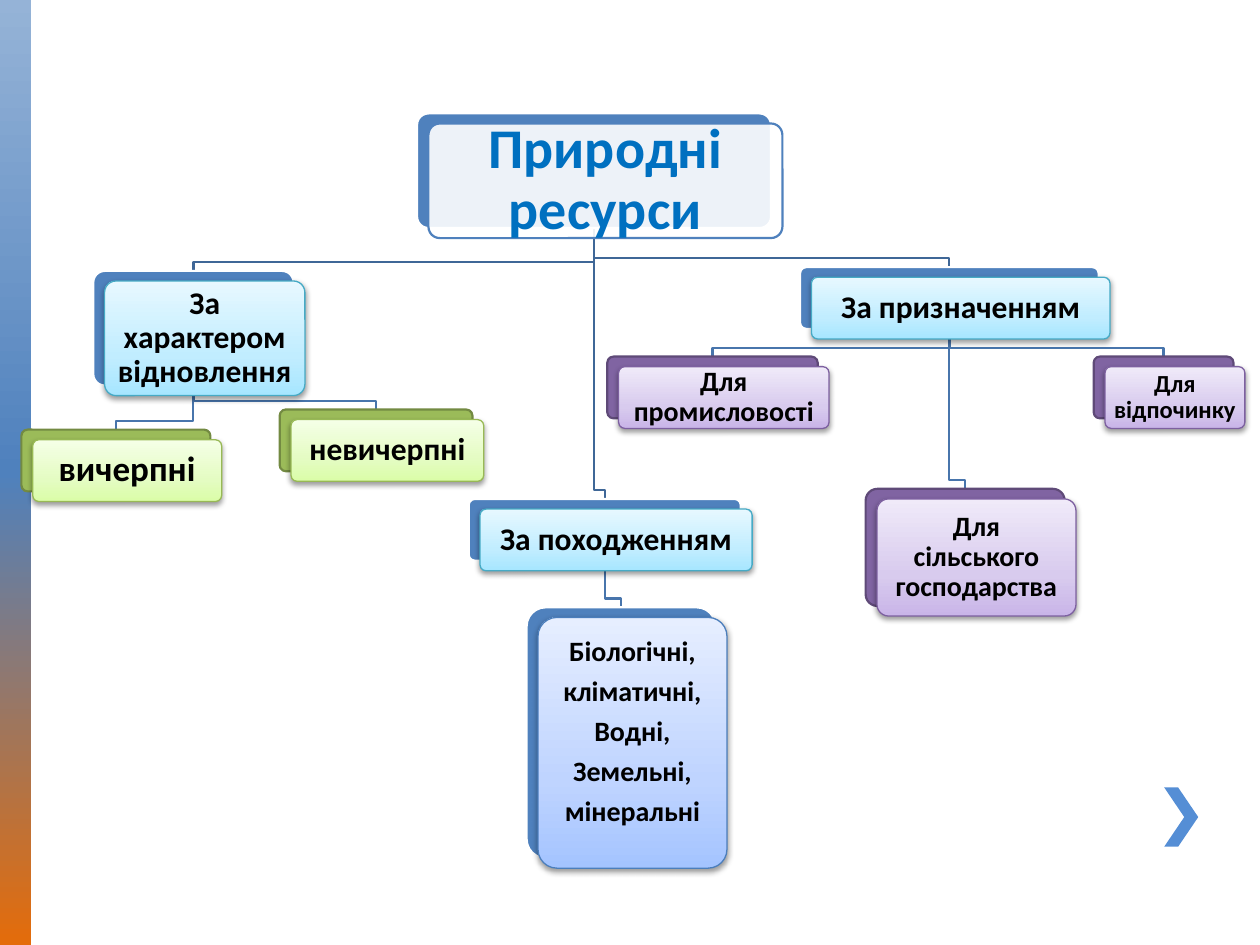
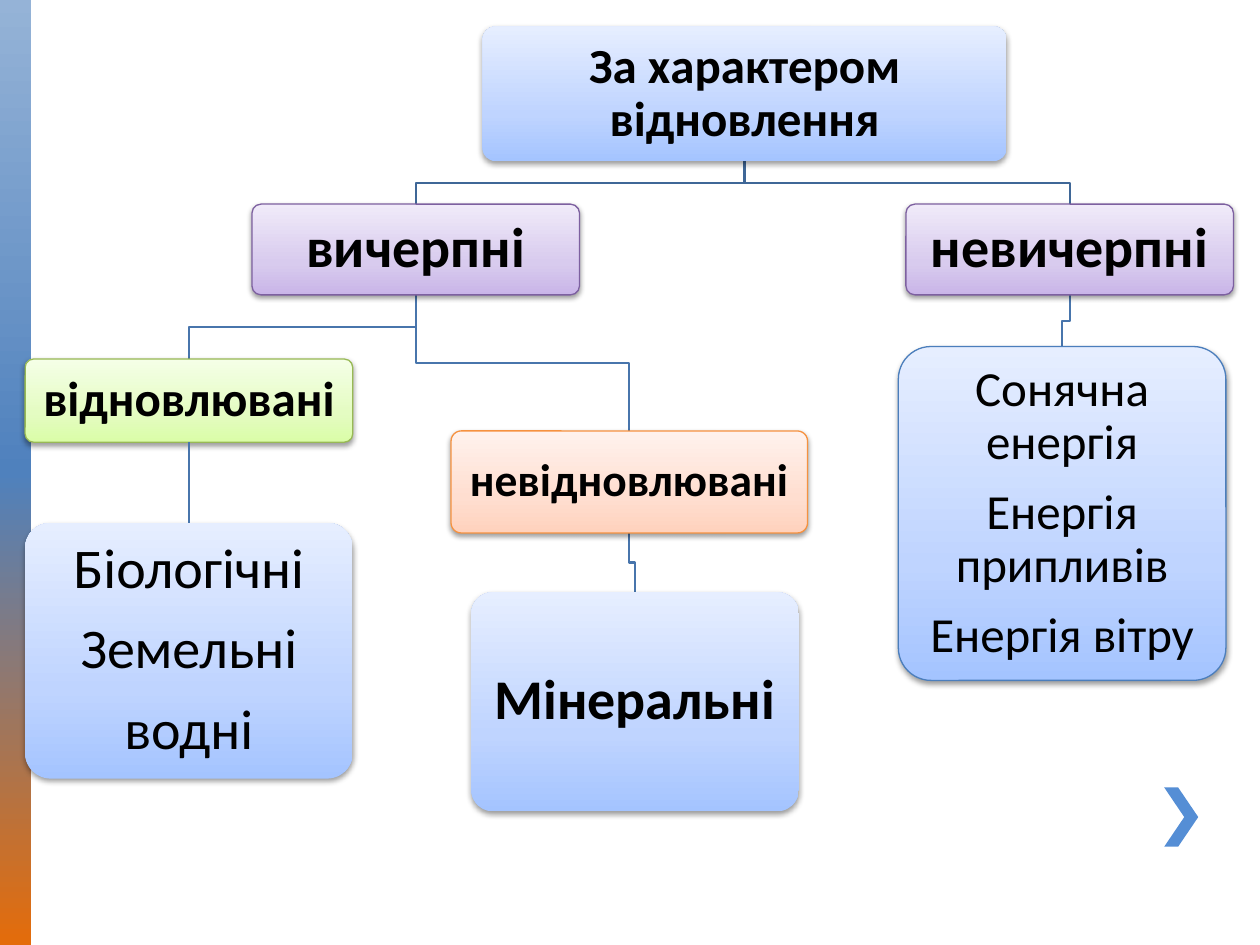
from lxml.etree import SubElement
from pptx import Presentation
from pptx.dml.color import RGBColor
from pptx.enum.shapes import MSO_CONNECTOR, MSO_SHAPE
from pptx.enum.text import MSO_ANCHOR, PP_ALIGN
from pptx.oxml.ns import qn
from pptx.util import Inches, Pt


def color(hex_string):
    return RGBColor.from_string(hex_string)


def paint(shape, fill, outline=None, line_width=0.75, angle=90, shadow=False):
    """Fill is None, a hex string or a list of (percent, hex) stops."""
    shape.shadow.inherit = False
    if fill is None:
        shape.fill.background()
    elif isinstance(fill, str):
        shape.fill.solid()
        shape.fill.fore_color.rgb = color(fill)
    else:
        shape.fill.gradient()
        shape.fill.gradient_angle = angle
        stop_list = shape._element.spPr.find(qn("a:gradFill")).find(qn("a:gsLst"))
        for stop in list(stop_list):
            stop_list.remove(stop)
        for percent, hex_string in fill:
            stop = SubElement(stop_list, qn("a:gs"), pos=str(percent * 1000))
            SubElement(stop, qn("a:srgbClr"), val=hex_string)
    if outline:
        shape.line.color.rgb = color(outline)
        shape.line.width = Pt(line_width)
    else:
        shape.line.fill.background()
    if shadow:
        effects = shape._element.spPr.find(qn("a:effectLst"))
        outer = SubElement(effects, qn("a:outerShdw"), blurRad="40000", dist="20000",
                           dir="5400000", rotWithShape="0")
        black = SubElement(outer, qn("a:srgbClr"), val="000000")
        SubElement(black, qn("a:alpha"), val="38000")


# Shared look
FONT = "Calibri"
ROOT_LINK, CHILD_LINK = "3F6797", "4875AC"
BAND = [(0, "95B3D7"), (50, "4F81BD"), (100, "E46C0A")]
BLUE = [(0, "A4C4FF"), (35, "BFD4FF"), (100, "E6EEFF")]
AQUA = [(0, "A7E6FF"), (35, "C1EDFF"), (100, "E7F8FF")]
GREEN = [(0, "DAFDA7"), (35, "E4FCC2"), (100, "F5FFE7")]
PURPLE = [(0, "C9B5E8"), (35, "D8CBEE"), (100, "F0EAF9")]
ORANGE = [(0, "FFD2BD"), (35, "FFDED0"), (100, "FFF2ED")]

# Style: front fill, front outline, back fill, back outline
STYLES = {
    "root": ("FFFFFF", "4F81BD", "4F81BD", "FFFFFF"),
    "aqua": (AQUA, "46AAC5", "4F81BD", "FFFFFF"),
    "blue": (BLUE, "4B7EBC", "4F81BD", "FFFFFF"),
    "plain": (BLUE, None, None, None),
    "green": (GREEN, "98B955", "9BBB59", "738A42"),
    "purple": (PURPLE, "7D60A0", "8064A2", "5F4A78"),
    "orange": (ORANGE, "F69240", None, None),
}

# Each card: left, top, width, height, style, text size, bold, paragraphs
resources_cards = {
    "resources": (3.31, 0.9, 2.81, 0.91, "root", 32, True, ["Природні ресурси"]),
    "renewal": (0.74, 2.15, 1.59, 0.91, "aqua", 18, True, ["За характером відновлення"]),
    "exhaustible": (0.17, 3.41, 1.5, 0.49, "green", 20, True, ["вичерпні"]),
    "inexhaustible": (2.22, 3.25, 1.53, 0.49, "green", 18, True, ["невичерпні"]),
    "origin": (3.72, 3.96, 2.16, 0.49, "aqua", 18, True, ["За походженням"]),
    "origin list": (4.18, 4.82, 1.5, 1.99, "blue", 16, True,
                    ["Біологічні,", "кліматичні,", "Водні,", "Земельні,", "мінеральні"]),
    "purpose": (6.35, 2.12, 2.37, 0.49, "aqua", 18, True, ["За призначенням"]),
    "industry": (4.82, 2.83, 1.67, 0.49, "purple", 16, True, ["Для промисловості"]),
    "farming": (6.87, 3.88, 1.58, 0.93, "purple", 16, True, ["Для сільського господарства"]),
    "leisure": (8.68, 2.83, 1.11, 0.49, "purple", 14, True, ["Для відпочинку"]),
}
resources_links = [
    ("purpose", "leisure"), ("purpose", "farming"), ("purpose", "industry"),
    ("resources", "purpose"), ("origin", "origin list"), ("resources", "origin"),
    ("renewal", "inexhaustible"), ("renewal", "exhaustible"), ("resources", "renewal"),
]
renewal_cards = {
    "renewal": (3.83, 0.21, 4.16, 1.07, "plain", 28, True, ["За характером відновлення"]),
    "exhaustible": (2, 1.62, 2.6, 0.72, "purple", 32, True, ["вичерпні"]),
    "renewable": (0.2, 2.85, 2.6, 0.66, "green", 28, True, ["відновлювані"]),
    "renewable list": (0.2, 4.15, 2.6, 2.03, "plain", 32, False,
                       ["Біологічні", "Земельні", "водні"]),
    "non-renewable": (3.58, 3.42, 2.83, 0.81, "orange", 26, True, ["невідновлювані"]),
    "mineral": (3.74, 4.7, 2.6, 1.74, "plain", 32, True, ["Мінеральні"]),
    "inexhaustible": (7.19, 1.62, 2.6, 0.72, "purple", 32, True, ["невичерпні"]),
    "energy list": (7.13, 2.75, 2.6, 2.65, "blue", 28, False,
                    ["Сонячна енергія", "Енергія припливів", "Енергія вітру"]),
}
renewal_links = [
    ("renewal", "exhaustible"), ("exhaustible", "renewable"),
    ("exhaustible", "non-renewable"), ("non-renewable", "mineral"),
    ("renewal", "inexhaustible"), ("inexhaustible", "energy list"),
]

presentation = Presentation()
presentation.slide_width = Inches(10)
presentation.slide_height = Inches(7.5)

# Layered cards have a back plate, and their links bend just above the child
for cards, links, layered in ((resources_cards, resources_links, True),
                              (renewal_cards, renewal_links, False)):
    slide = presentation.slides.add_slide(presentation.slide_layouts[6])

    # Side band and chevron
    band = slide.shapes.add_shape(MSO_SHAPE.RECTANGLE, 0, 0, Inches(0.25), Inches(7.5))
    paint(band, BAND, angle=270)
    chevron = slide.shapes.add_shape(MSO_SHAPE.CHEVRON, Inches(9.24), Inches(6.25),
                                     Inches(0.27), Inches(0.47))
    chevron.adjustments[0] = 0.59
    paint(chevron, "558ED5")

    # Elbow links from the parent's bottom to the child's top
    root = next(iter(cards))
    for parent, child in links:
        left, top, width, height = cards[parent][:4]
        start_x, start_y = left + width / 2, top + height
        left, end_y, width = cards[child][:3]
        end_x = left + width / 2
        bend_y = end_y - 0.07 if layered else (start_y + end_y) / 2
        builder = slide.shapes.build_freeform(Inches(start_x), Inches(start_y))
        corners = [(start_x, bend_y), (end_x, bend_y), (end_x, end_y)]
        builder.add_line_segments([(Inches(x), Inches(y)) for x, y in corners], close=False)
        paint(builder.convert_to_shape(), None, ROOT_LINK if parent == root else CHILD_LINK, 1.25)

    # Cards
    card_shapes = {}
    for name, (left, top, width, height, style, size, bold, paragraphs) in cards.items():
        fill, outline, back_fill, back_outline = STYLES[style]
        if layered:
            back = slide.shapes.add_shape(MSO_SHAPE.ROUNDED_RECTANGLE, Inches(left), Inches(top),
                                          Inches(width), Inches(height))
            back.adjustments[0] = 0.1
            paint(back, back_fill, back_outline, 1.25)
            left, top = left + 0.09, top + 0.08
        card = slide.shapes.add_shape(MSO_SHAPE.ROUNDED_RECTANGLE, Inches(left), Inches(top),
                                      Inches(width), Inches(height))
        card.adjustments[0] = 0.1
        is_root_style = style == "root"
        paint(card, fill, outline, 1.25 if is_root_style else 0.75, shadow=not is_root_style)
        if is_root_style:
            white = card._element.spPr.find(qn("a:solidFill")).find(qn("a:srgbClr"))
            SubElement(white, qn("a:alpha"), val="90000")
        card_shapes[name] = card

        inset = Pt(size * 0.28)
        frame_format = {"word_wrap": True, "vertical_anchor": MSO_ANCHOR.MIDDLE,
                        "margin_left": inset, "margin_right": inset,
                        "margin_top": inset, "margin_bottom": inset}
        if name == "origin list":
            frame_format["margin_bottom"] = inset + Inches(0.16)
        for attribute, value in frame_format.items():
            setattr(card.text_frame, attribute, value)
        for index, text in enumerate(paragraphs):
            paragraph = card.text_frame.add_paragraph() if index else card.text_frame.paragraphs[0]
            paragraph_format = {"alignment": PP_ALIGN.CENTER, "line_spacing": 0.9,
                                "space_after": Pt(size * 0.35)}
            for attribute, value in paragraph_format.items():
                setattr(paragraph, attribute, value)
            run = paragraph.add_run()
            run.text = text
            for attribute, value in {"name": FONT, "size": Pt(size), "bold": bold}.items():
                setattr(run.font, attribute, value)
            run.font.color.rgb = color("0070C0" if is_root_style else "000000")

# Straight link on the second slide
straight_link = slide.shapes.add_connector(MSO_CONNECTOR.STRAIGHT, 0, 0, 0, 0)
straight_link.begin_connect(card_shapes["renewable"], 2)
straight_link.end_connect(card_shapes["renewable list"], 0)
straight_link.line.color.rgb = color(CHILD_LINK)
straight_link.line.width = Pt(1.25)
SubElement(straight_link._element.spPr, qn("a:effectLst"))

presentation.save("out.pptx")
